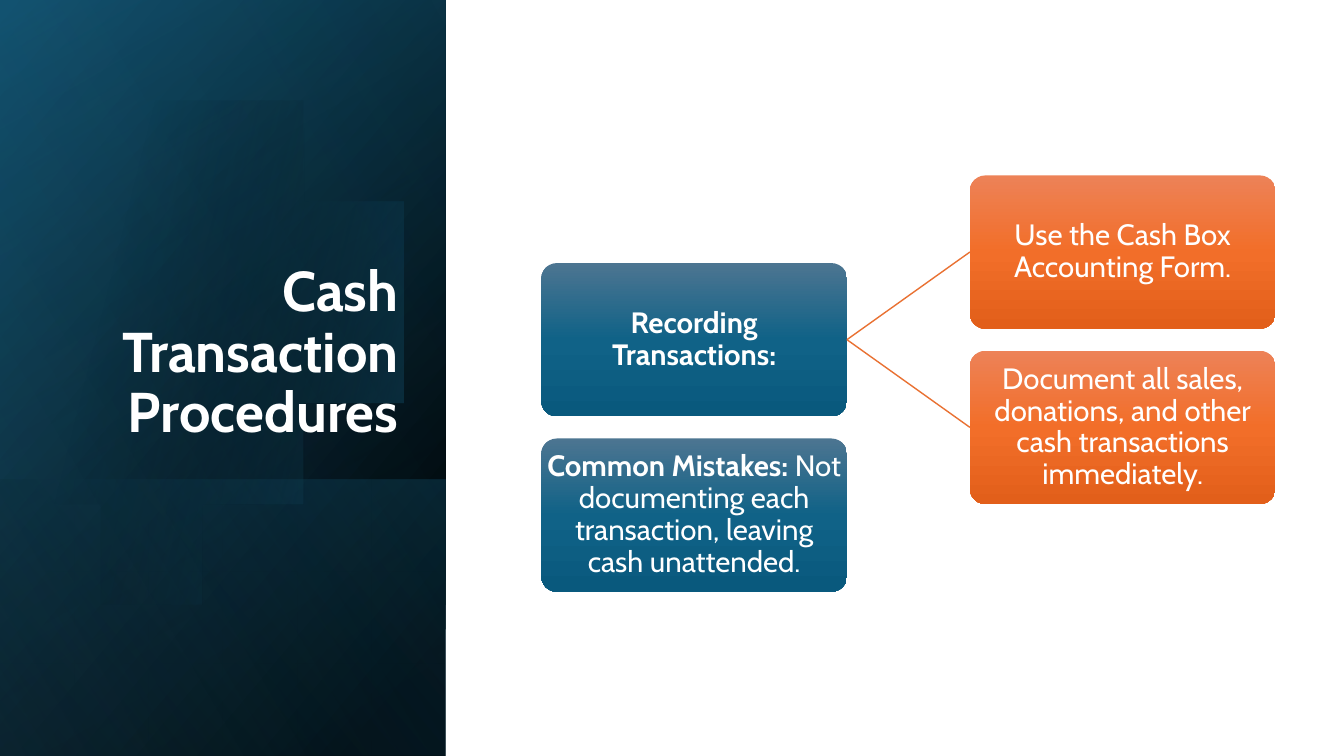
from dataclasses import dataclass
from math import acos, cos, sin

from lxml.etree import SubElement
from pptx import Presentation
from pptx.dml.color import RGBColor
from pptx.enum.shapes import MSO_CONNECTOR as Link, MSO_SHAPE as Shape
from pptx.enum.text import MSO_ANCHOR as Anchor, PP_ALIGN as Align
from pptx.oxml.ns import qn
from pptx.util import Inches, Pt

# Content: each run is (text, bold); each box has a column and a half-row
TITLE = [("Cash Transaction Procedures", True)]
BOXES = {
    "recording": (0, 1, [("Recording Transactions:", True)]),
    "form": (1, 0, [("Use the Cash Box Accounting Form.", False)]),
    "document": (1, 2, [("Document all sales, donations, and other cash "
                         "transactions immediately.", False)]),
    "mistakes": (0, 3, [("Common Mistakes: ", True),
                        ("Not documenting each transaction, leaving cash "
                         "unattended.", False)]),
}
LINKS = [("recording", "form"), ("recording", "document")]


@dataclass(frozen=True)
class Theme:
    font: str = "Cabin"
    title_size: int = 40
    box_size: int = 21
    text: str = "FFFFFF"
    link: str = "E97132"
    # Gradient stops are (position %, colour, opacity %)
    columns: tuple = (
        ((0, "4C7591", 100), (50, "106287", 100), (100, "09597D", 100)),
        ((0, "ED8257", 100), (50, "F26E29", 100), (100, "E25F1A", 100)),
    )
    base: tuple = ((8, "000000", 100), (100, "104862", 100))
    tint: tuple = ((0, "000000", 0), (99, "156082", 46))
    footer: tuple = ((2, "156082", 29), (100, "000000", 30))
    disc: tuple = ((29, "000000", 0), (100, "156082", 43))
    glow: tuple = ((0, "000000", 0), (99, "46B1E1", 11))


THEME = Theme()

# Geometry in inches
SLIDE_W, SLIDE_H = 13.33, 7.5
PANEL_W = 4.42
FOOTER_H = 2.74
DISC_X, DISC_Y, DISC_R = 1.49, 3.37, 2.26
GRID_X, GRID_Y = 5.37, 1.74
COLUMN_STEP, HALF_ROW = 4.25, 0.87
BOX_W, BOX_H = 3.03, 1.52

deck = Presentation()
deck.slide_width, deck.slide_height = Inches(SLIDE_W), Inches(SLIDE_H)
slide = deck.slides.add_slide(deck.slide_layouts[6])
shapes = slide.shapes


def paint(shape, stops, angle):
    """Fill with a gradient, without line or shadow."""
    shape.shadow.inherit = False
    shape.line.fill.background()
    shape.fill.gradient()
    gradient = shape._element.spPr.find(qn("a:gradFill"))
    stop_list = gradient.find(qn("a:gsLst"))
    for old in list(stop_list):
        stop_list.remove(old)
    for position, color, opacity in stops:
        stop = SubElement(stop_list, qn("a:gs"), pos=str(position * 1000))
        tone = SubElement(stop, qn("a:srgbClr"), val=color)
        if opacity < 100:
            SubElement(tone, qn("a:alpha"), val=str(opacity * 1000))
    gradient.find(qn("a:lin")).set("ang", str(angle * 60000))


def add_layer(top, height, stops, angle):
    """Cover the panel from top with a mirrored rectangle on its side."""
    left = (PANEL_W - height) / 2
    layer = shapes.add_shape(
        Shape.RECTANGLE, Inches(left), Inches(top + (height - PANEL_W) / 2),
        Inches(height), Inches(PANEL_W))
    layer.rotation = 90
    layer._element.spPr.xfrm.set("flipH", "1")
    paint(layer, stops, angle)


def add_disc():
    """Draw the circle, cut off at the slide's left edge."""
    cut, steps = acos(-DISC_X / DISC_R), 120
    angles = [cut * (2 * i / steps - 1) for i in range(steps + 1)]
    rim = [(max(0, DISC_X + DISC_R * cos(a)), DISC_Y + DISC_R * sin(a))
           for a in angles]
    outline = shapes.build_freeform(*rim[0], scale=Inches(1))
    outline.add_line_segments(rim[1:], close=True)
    paint(outline.convert_to_shape(), THEME.disc, 14)


def write(shape, runs, size, align, **frame_format):
    frame = shape.text_frame
    for name, value in {"word_wrap": True, **frame_format}.items():
        setattr(frame, name, value)
    paragraph = frame.paragraphs[0]
    paragraph.alignment, paragraph.line_spacing = align, 0.9
    for text, bold in runs:
        run = paragraph.add_run()
        run.text = text
        for name, value in {"name": THEME.font, "size": Pt(size),
                            "bold": bold}.items():
            setattr(run.font, name, value)
        run.font.color.rgb = RGBColor.from_string(THEME.text)


# Title panel, from back to front
add_layer(0, SLIDE_H, THEME.base, 50)
add_layer(0, SLIDE_H, THEME.tint, 30)
add_layer(SLIDE_H - FOOTER_H, FOOTER_H, THEME.footer, 130)
add_disc()
add_layer(0, SLIDE_H, THEME.glow, 120)
title = shapes.add_textbox(Inches(0.64), Inches(1.84), Inches(3.41), Inches(2.62))
write(title, TITLE, THEME.title_size, Align.RIGHT, vertical_anchor=Anchor.BOTTOM)

# Boxes
margins = {f"margin_{side}": Inches(0.01)
           for side in ("left", "top", "right", "bottom")}
boxes = {}
for key, (column, half_row, runs) in BOXES.items():
    box = shapes.add_shape(
        Shape.ROUNDED_RECTANGLE, Inches(GRID_X + column * COLUMN_STEP),
        Inches(GRID_Y + half_row * HALF_ROW), Inches(BOX_W), Inches(BOX_H))
    box.adjustments[0] = 0.1
    paint(box, THEME.columns[column], 90)
    write(box, runs, THEME.box_size, Align.CENTER,
          vertical_anchor=Anchor.MIDDLE, **margins)
    boxes[key] = box

# Links from a box's right side to the next box's left side
for parent, child in LINKS:
    link = shapes.add_connector(Link.STRAIGHT, 0, 0, 0, 0)
    link.begin_connect(boxes[parent], 3)
    link.end_connect(boxes[child], 1)
    link.line.color.rgb = RGBColor.from_string(THEME.link)
    link.line.width = Pt(1)
    SubElement(link._element.spPr, qn("a:effectLst"))

deck.save("out.pptx")
